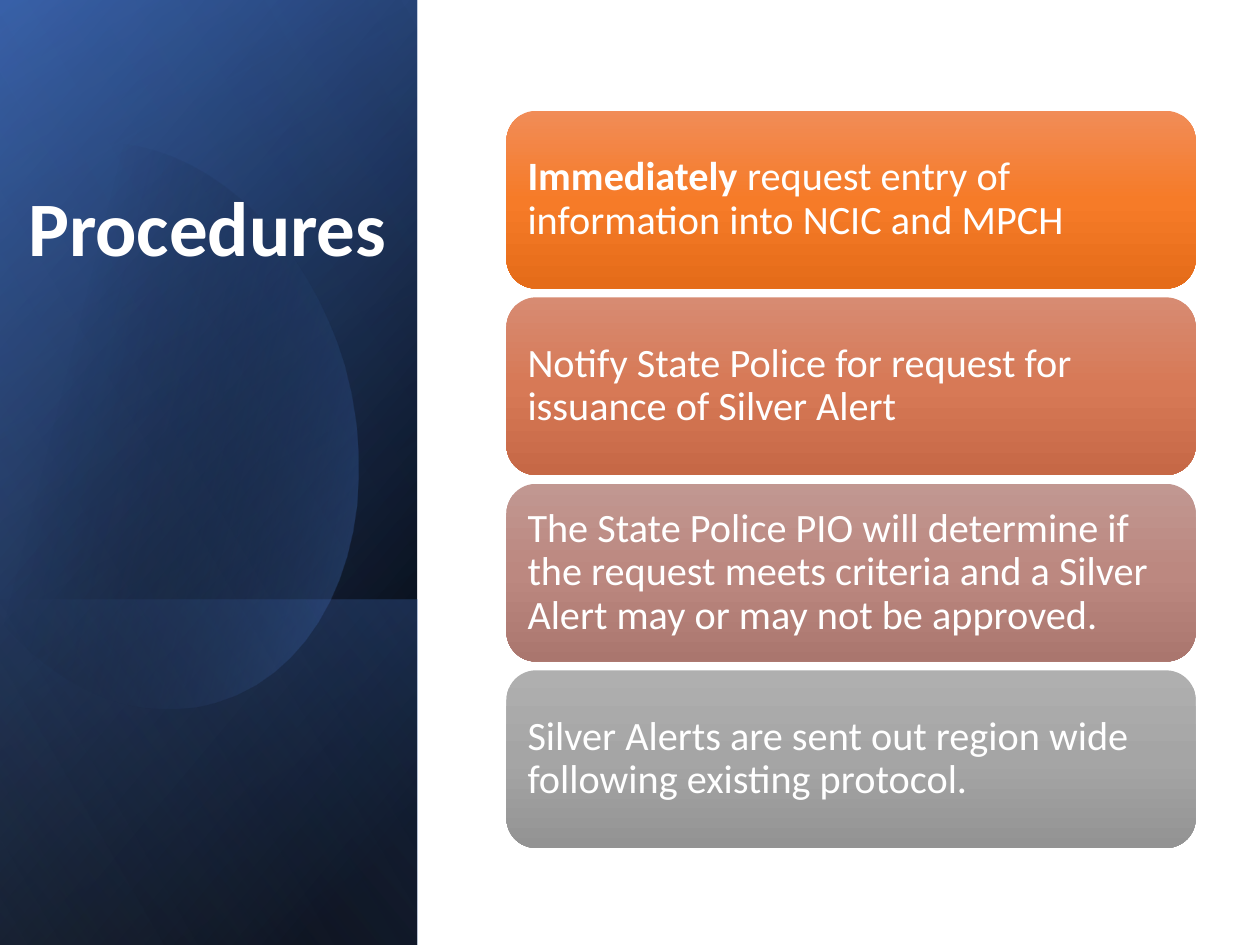
from lxml import etree
from pptx import Presentation
from pptx.dml.color import RGBColor
from pptx.enum.shapes import MSO_SHAPE as Shape
from pptx.enum.text import MSO_ANCHOR as Anchor, MSO_AUTO_SIZE as AutoSize, PP_ALIGN as Align
from pptx.oxml.ns import qn
from pptx.util import Inches, Pt

COLORS = {
    "white": "FFFFFF", "black": "000000", "blue": "4472C4",
    "deep_blue": "2F5597", "pale_blue": "8FAADC",
}
FONT = "Calibri"

# Each step: top, middle and bottom colour, bold lead, text
STEPS = [
    (("F18C57", "F67B28", "E56C19"), "Immediately ",
     "request entry of information into NCIC and MPCH"),
    (("D78B72", "D77956", "C66846"), "",
     "Notify State Police for request for issuance of Silver Alert"),
    (("C19791", "BC8880", "AA766E"), "",
     "The State Police PIO will determine if the request meets criteria "
     "and a Silver Alert may or may not be approved."),
    (("AFAFAF", "A5A5A5", "939393"), "",
     "Silver Alerts are sent out region wide following existing protocol."),
]


def paint(shape, stops, angle):
    """Gradient fill without line or shadow; stops are (position, hex, opacity)."""
    shape.shadow.inherit = False
    shape.line.fill.background()
    shape.fill.gradient()
    fill = shape._element.spPr.find(qn("a:gradFill"))
    for child in list(fill):
        fill.remove(child)
    fill.set("rotWithShape", "1")
    stop_list = etree.SubElement(fill, qn("a:gsLst"))
    for position, color, opacity in stops:
        stop = etree.SubElement(stop_list, qn("a:gs"), pos=str(position * 1000))
        tint = etree.SubElement(stop, qn("a:srgbClr"), val=color)
        if opacity < 100:
            etree.SubElement(tint, qn("a:alpha"), val=str(opacity * 1000))
    etree.SubElement(fill, qn("a:lin"), ang=str(angle * 60000), scaled="0")


def style(para, size, bold=None):
    para.line_spacing = 0.9
    para.font.name = FONT
    para.font.size = Pt(size)
    para.font.bold = bold
    para.font.color.rgb = RGBColor.from_string(COLORS["white"])


def add_layer(page, left, top, width, height, stops, angle):
    """Rectangle turned a quarter and mirrored, so it covers the given box."""
    layer = page.shapes.add_shape(
        Shape.RECTANGLE,
        Inches(left + (width - height) / 2), Inches(top + (height - width) / 2),
        Inches(height), Inches(width))
    layer.rotation = 90
    layer._element.spPr.find(qn("a:xfrm")).set("flipH", "1")
    paint(layer, stops, angle)


def curve(start, first, second, end, steps=16):
    """Points along a cubic curve, without its start."""
    for step in range(1, steps + 1):
        t = step / steps
        weights = ((1 - t) ** 3, 3 * t * (1 - t) ** 2, 3 * t * t * (1 - t), t ** 3)
        yield tuple(sum(w * point[axis] for w, point in
                        zip(weights, (start, first, second, end))) for axis in (0, 1))


def add_oval(page, left, top):
    """Large soft oval, cut at its left side."""
    start = (1.21, 0.01)
    sections = [
        [(1.96, 0.09), (2.69, 0.79), (2.98, 1.77)],
        [(3.32, 2.99), (2.87, 4.18), (1.96, 4.44)],
        [(1.39, 4.61), (0.78, 4.37), (0.32, 3.87)],
        [(0.22, 3.75)], [(0, 0.53)], [(0.1, 0.41)],
        [(0.27, 0.24), (0.47, 0.12), (0.7, 0.05)],
        [(0.87, 0), (1.04, -0.01), (1.21, 0.01)],
    ]
    points = [start]
    for section in sections:
        points.extend(curve(points[-1], *section) if len(section) == 3 else section)
    outline = [(Inches(left + x), Inches(top + y)) for x, y in points]
    builder = page.shapes.build_freeform(*outline[0])
    builder.add_line_segments(outline[1:], close=True)
    paint(builder.convert_to_shape(),
          [(29, COLORS["black"], 0), (100, COLORS["blue"], 43)], 14)


def add_side_panel(page, left, top, width, height):
    black, blue = COLORS["black"], COLORS["blue"]
    box = (left, top, width, height)
    add_layer(page, *box, [(8, black, 100), (100, COLORS["deep_blue"], 100)], 50)
    add_layer(page, *box, [(0, black, 0), (99, blue, 46)], 30)
    # Darker band at the foot
    band = 2.74
    add_layer(page, left, top + height - band, width, band,
              [(2, blue, 29), (100, black, 30)], 130)
    add_oval(page, left - 0.25, top + 1.13)
    add_layer(page, *box, [(0, black, 0), (99, COLORS["pale_blue"], 11)], 120)


def add_title(page, left, top, width, height):
    title = page.shapes.title
    title.left, title.top = Inches(left), Inches(top)
    title.width, title.height = Inches(width), Inches(height)
    frame = title.text_frame
    frame.text = "Procedures"
    frame.auto_size = AutoSize.NONE
    frame.vertical_anchor = Anchor.BOTTOM
    para = frame.paragraphs[0]
    para.alignment = Align.RIGHT
    style(para, 44, True)
    page.shapes._spTree.append(title._element)  # bring in front of the panel


def add_steps(page, left, top, width, height, gap=0.07):
    card_height = (height - gap * (len(STEPS) - 1)) / len(STEPS)
    for index, (shades, lead, text) in enumerate(STEPS):
        card = page.shapes.add_shape(
            Shape.ROUNDED_RECTANGLE, Inches(left),
            Inches(top + index * (card_height + gap)),
            Inches(width), Inches(card_height))
        paint(card, [(pos, shade, 100) for pos, shade in zip((0, 50, 100), shades)], 90)
        frame = card.text_frame
        frame.word_wrap = True
        frame.vertical_anchor = Anchor.MIDDLE
        frame.margin_left = frame.margin_right = Inches(0.1)
        frame.margin_top = frame.margin_bottom = Inches(0.1)
        para = frame.paragraphs[0]
        para.alignment = Align.LEFT
        style(para, 23)
        if lead:
            span = para.add_run()
            span.text = lead
            span.font.bold = True
        para.add_run().text = text


def main():
    deck = Presentation()
    deck.slide_width, deck.slide_height = Inches(10), Inches(7.5)
    page = deck.slides.add_slide(deck.slide_layouts[5])
    add_side_panel(page, 0, 0, 3.31, 7.5)
    add_steps(page, 4.02, 0.88, 5.47, 5.85)
    add_title(page, 0, 1.17, 3.17, 1.05)
    deck.save("out.pptx")


if __name__ == "__main__":
    main()
